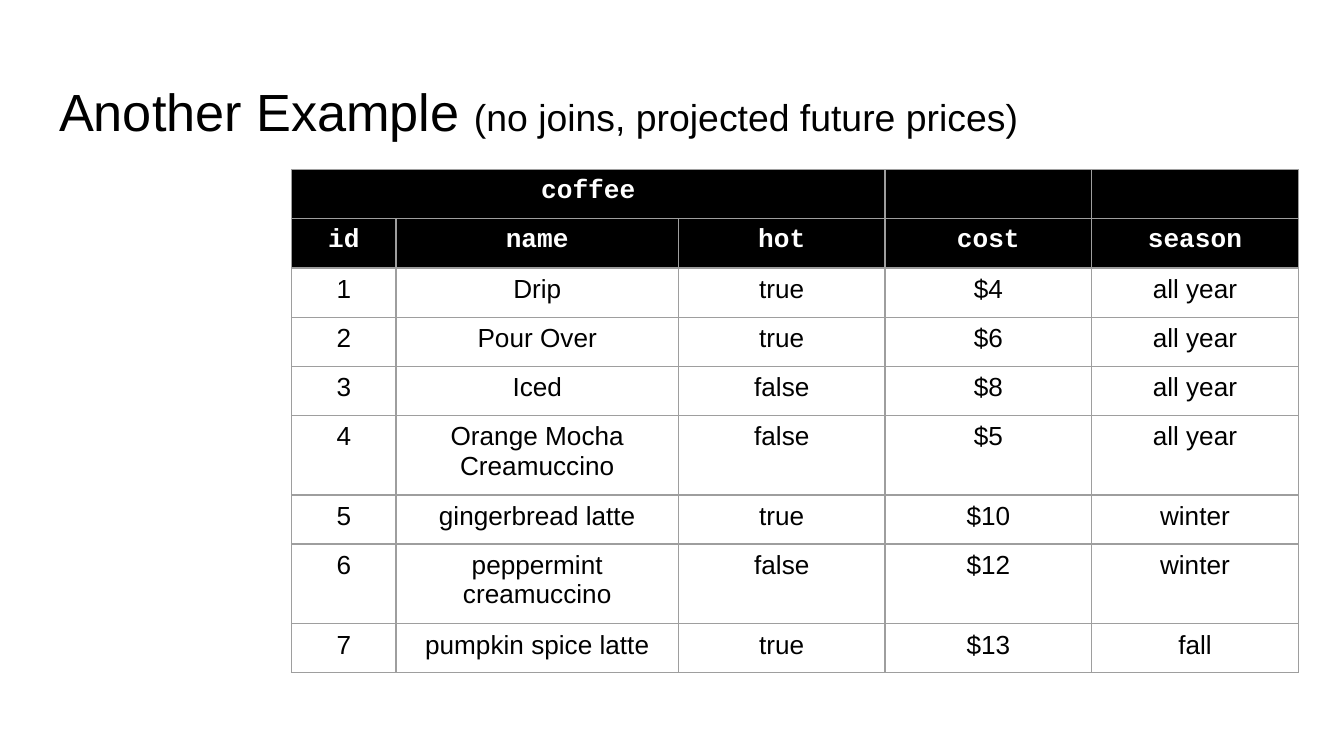
from lxml import etree
from pptx import Presentation
from pptx.dml.color import RGBColor
from pptx.enum.text import MSO_ANCHOR, MSO_AUTO_SIZE, PP_ALIGN
from pptx.oxml.ns import qn
from pptx.util import Pt

BLACK = RGBColor(0x00, 0x00, 0x00)
WHITE = RGBColor(0xFF, 0xFF, 0xFF)
GRAY = RGBColor(0x9E, 0x9E, 0x9E)

LEFT, CENTER = PP_ALIGN.LEFT, PP_ALIGN.CENTER
TOP = MSO_ANCHOR.TOP
NO_AUTOFIT = MSO_AUTO_SIZE.NONE

BODY_FONT = "Arial"
HEADER_FONT = "Courier New"
TITLE_ONLY = 5

COLUMN_WIDTHS = [56, 151.3, 110.7, 110.7, 110.7]
ONE_LINE, TWO_LINES = 26.35, 42.6
TWO_LINE_ROWS = (5, 7)
HEADER_ROWS = 2
CELL_MARGIN = 3.6

COFFEE_ROWS = [
    ["coffee", "", "", "", ""],
    ["id", "name", "hot", "cost", "season"],
    ["1", "Drip", "true", "$4", "all year"],
    ["2", "Pour Over", "true", "$6", "all year"],
    ["3", "Iced", "false", "$8", "all year"],
    ["4", "Orange Mocha Creamuccino", "false", "$5", "all year"],
    ["5", "gingerbread latte", "true", "$10", "winter"],
    ["6", "peppermint creamuccino", "false", "$12", "winter"],
    ["7", "pumpkin spice latte", "true", "$13", "fall"],
]


def add_run(paragraph, text, size, font=BODY_FONT, color=BLACK, bold=False):
    run = paragraph.add_run()
    run.text = text
    run.font.name = font
    run.font.size = Pt(size)
    run.font.bold = bold
    run.font.color.rgb = color


def set_margins(target, horizontal, vertical):
    target.margin_left = target.margin_right = Pt(horizontal)
    target.margin_top = target.margin_bottom = Pt(vertical)


def set_title(slide):
    title = slide.shapes.title
    title.left, title.top = Pt(24.5), Pt(35)
    title.width, title.height = Pt(671), Pt(45.1)
    frame = title.text_frame
    frame.word_wrap = True
    frame.auto_size = NO_AUTOFIT
    frame.vertical_anchor = TOP
    set_margins(frame, 7.2, 7.2)
    paragraph = frame.paragraphs[0]
    paragraph.alignment = LEFT
    add_run(paragraph, "Another Example ", 28)
    add_run(paragraph, "(no joins, projected future prices)", 20)


def set_borders(cell):
    """Draw a thin gray line on each side; lines must precede the fill."""
    properties = cell._tc.get_or_add_tcPr()
    for position, side in enumerate(("a:lnL", "a:lnR", "a:lnT", "a:lnB")):
        line = etree.Element(qn(side), w=str(Pt(0.75)))
        fill = etree.SubElement(line, qn("a:solidFill"))
        etree.SubElement(fill, qn("a:srgbClr"), val=str(GRAY))
        properties.insert(position, line)


def format_cell(cell, text, is_header):
    # An empty cell needs no vertical margin, so its row stays low
    set_margins(cell, CELL_MARGIN, CELL_MARGIN if text else 0)
    cell.vertical_anchor = TOP
    if is_header:
        cell.fill.solid()
        cell.fill.fore_color.rgb = BLACK
    else:
        cell.fill.background()
    set_borders(cell)
    if text:
        paragraph = cell.text_frame.paragraphs[0]
        paragraph.alignment = CENTER
        if is_header:
            add_run(paragraph, text, 14, HEADER_FONT, WHITE, bold=True)
        else:
            add_run(paragraph, text, 14)


def add_coffee_table(slide):
    heights = [TWO_LINES if index in TWO_LINE_ROWS else ONE_LINE
               for index in range(len(COFFEE_ROWS))]
    frame = slide.shapes.add_table(
        len(heights), len(COLUMN_WIDTHS), Pt(156.2), Pt(90.9),
        Pt(sum(COLUMN_WIDTHS)), Pt(sum(heights)))
    table = frame.table
    table.first_row = table.horz_banding = False
    for column, width in zip(table.columns, COLUMN_WIDTHS):
        column.width = Pt(width)
    for row, height in zip(table.rows, heights):
        row.height = Pt(height)

    # The table name spans its first three columns
    table.cell(0, 0).merge(table.cell(0, 2))
    for row_index, texts in enumerate(COFFEE_ROWS):
        for column_index, text in enumerate(texts):
            format_cell(table.cell(row_index, column_index), text,
                        row_index < HEADER_ROWS)


def main():
    presentation = Presentation()
    presentation.slide_width, presentation.slide_height = Pt(720), Pt(405)
    slide = presentation.slides.add_slide(
        presentation.slide_layouts[TITLE_ONLY])
    set_title(slide)
    add_coffee_table(slide)
    presentation.save("out.pptx")


if __name__ == "__main__":
    main()
